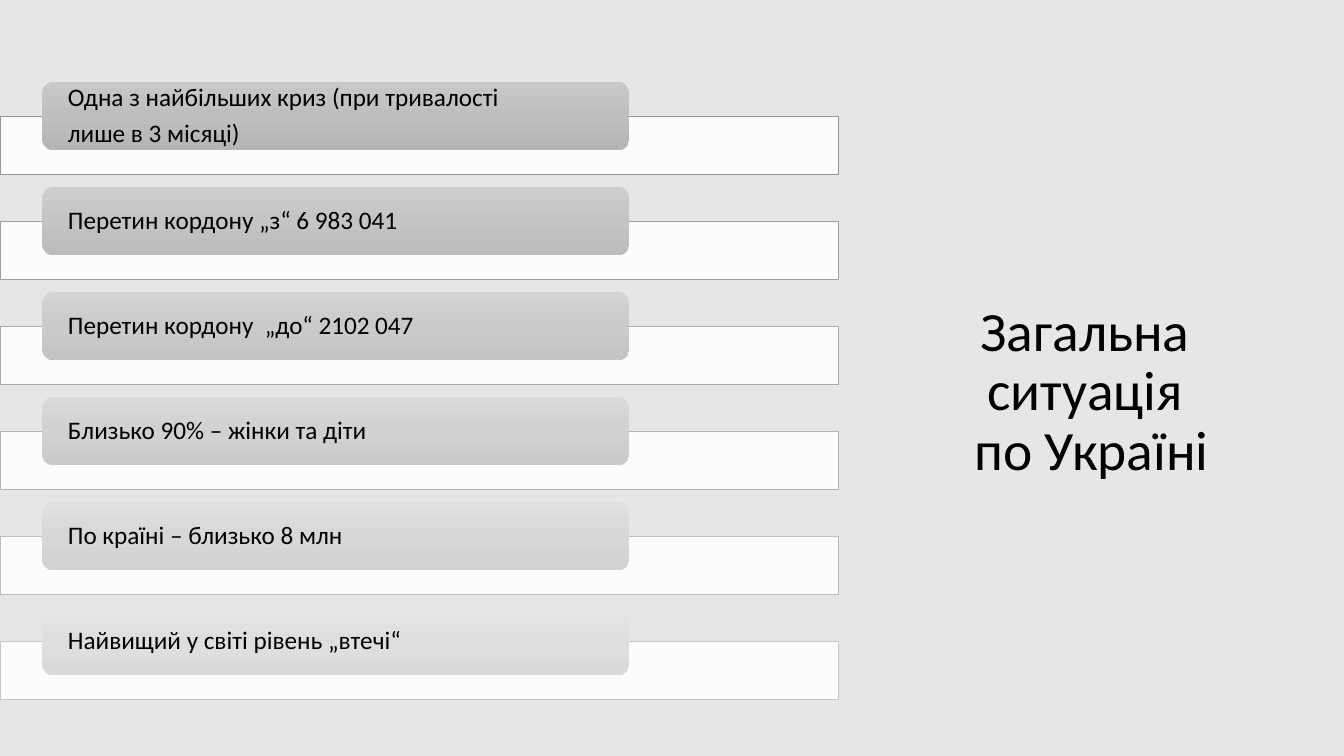
from copy import deepcopy

from lxml.etree import SubElement
from pptx import Presentation
from pptx.dml.color import RGBColor
from pptx.enum.shapes import MSO_SHAPE
from pptx.enum.text import MSO_ANCHOR, PP_ALIGN
from pptx.oxml.ns import qn
from pptx.util import Inches, Pt


def color(hex_code):
    return RGBColor.from_string(hex_code)


def write(frame, text, size, align, anchor, space_after=0, side=0.1, edge=0.05):
    frame.text = text
    frame.word_wrap = True
    frame.vertical_anchor = anchor
    frame.margin_left = frame.margin_right = Inches(side)
    frame.margin_top = frame.margin_bottom = Inches(edge)
    for paragraph in frame.paragraphs:
        paragraph.alignment = align
        paragraph.line_spacing = 0.9
        paragraph.space_before = Pt(0)
        paragraph.space_after = Pt(space_after)
        for run in paragraph.runs:
            run.font.size = Pt(size)
            run.font.name = "Calibri"
            run.font.color.rgb = color("000000")
        # Line breaks take the size of the text around them
        for line_break in paragraph._p.findall(qn("a:br")):
            line_break.append(deepcopy(paragraph.runs[0].font._element))


presentation = Presentation()
presentation.slide_width = Inches(13.33)
presentation.slide_height = Inches(7.5)
slide = presentation.slides.add_slide(presentation.slide_layouts[5])
slide.background.fill.solid()
slide.background.fill.fore_color.rgb = color("E7E6E6")

# Title on the right
heading = slide.shapes.title
heading.left, heading.top = Inches(9), Inches(2.91)
heading.width, heading.height = Inches(3.65), Inches(1.93)
write(heading.text_frame, "Загальна \vситуація \vпо Україні", size=39.6,
      align=PP_ALIGN.CENTER, anchor=MSO_ANCHOR.BOTTOM)

# Facts: text, bar outline, label gradient from top to bottom
facts = [
    ("Одна з найбільших криз (при тривалості\nлише в 3 місяці)",
     "969696", ("C9C9C9", "BEBEBE", "B5B5B5")),
    ("Перетин кордону „з“ 6 983 041", "9F9F9F", ("CECECE", "C4C4C4", "BCBCBC")),
    ("Перетин кордону  „до“ 2102 047", "A9A9A9", ("D4D4D4", "CACACA", "C4C4C4")),
    ("Близько 90% – жінки та діти", "B3B3B3", ("DADADA", "D1D1D1", "CBCBCB")),
    ("По країні – близько 8 млн", "BDBDBD", ("E1E1E1", "D7D7D7", "D2D2D2")),
    ("Найвищий у світі рівень „втечі“", "C6C6C6", ("E7E7E7", "DEDEDE", "DADADA")),
]
FIRST_TOP, PITCH = 0.81, 1.042

for row, (fact, outline, shades) in enumerate(facts):
    top = FIRST_TOP + row * PITCH

    # Translucent white bar behind the label
    bar = slide.shapes.add_shape(MSO_SHAPE.RECTANGLE, Inches(0), Inches(top + 0.34),
                                 Inches(8.32), Inches(0.58))
    bar.shadow.inherit = False
    bar.fill.solid()
    bar.fill.fore_color.rgb = color("FFFFFF")
    white = bar._element.spPr.find(qn("a:solidFill"))[0]
    SubElement(white, qn("a:alpha"), val="90000")
    bar.line.color.rgb = color(outline)
    bar.line.width = Pt(0.5)

    # Rounded label with a three-stop gradient
    label = slide.shapes.add_shape(MSO_SHAPE.ROUNDED_RECTANGLE, Inches(0.42), Inches(top),
                                   Inches(5.82), Inches(0.68))
    label.shadow.inherit = False
    label.line.fill.background()
    label.fill.gradient()
    label.fill.gradient_angle = 270
    stop_list = label._element.spPr.find(qn("a:gradFill")).find(qn("a:gsLst"))
    stop_list.insert(1, deepcopy(stop_list[0]))
    for stop, position, shade in zip(label.fill.gradient_stops, (0, 0.5, 1), shades):
        stop.position = position
        stop.color.rgb = color(shade)
    write(label.text_frame, fact, size=18, align=PP_ALIGN.LEFT,
          anchor=MSO_ANCHOR.MIDDLE, space_after=6.3, side=0.22, edge=0)

presentation.save("out.pptx")
